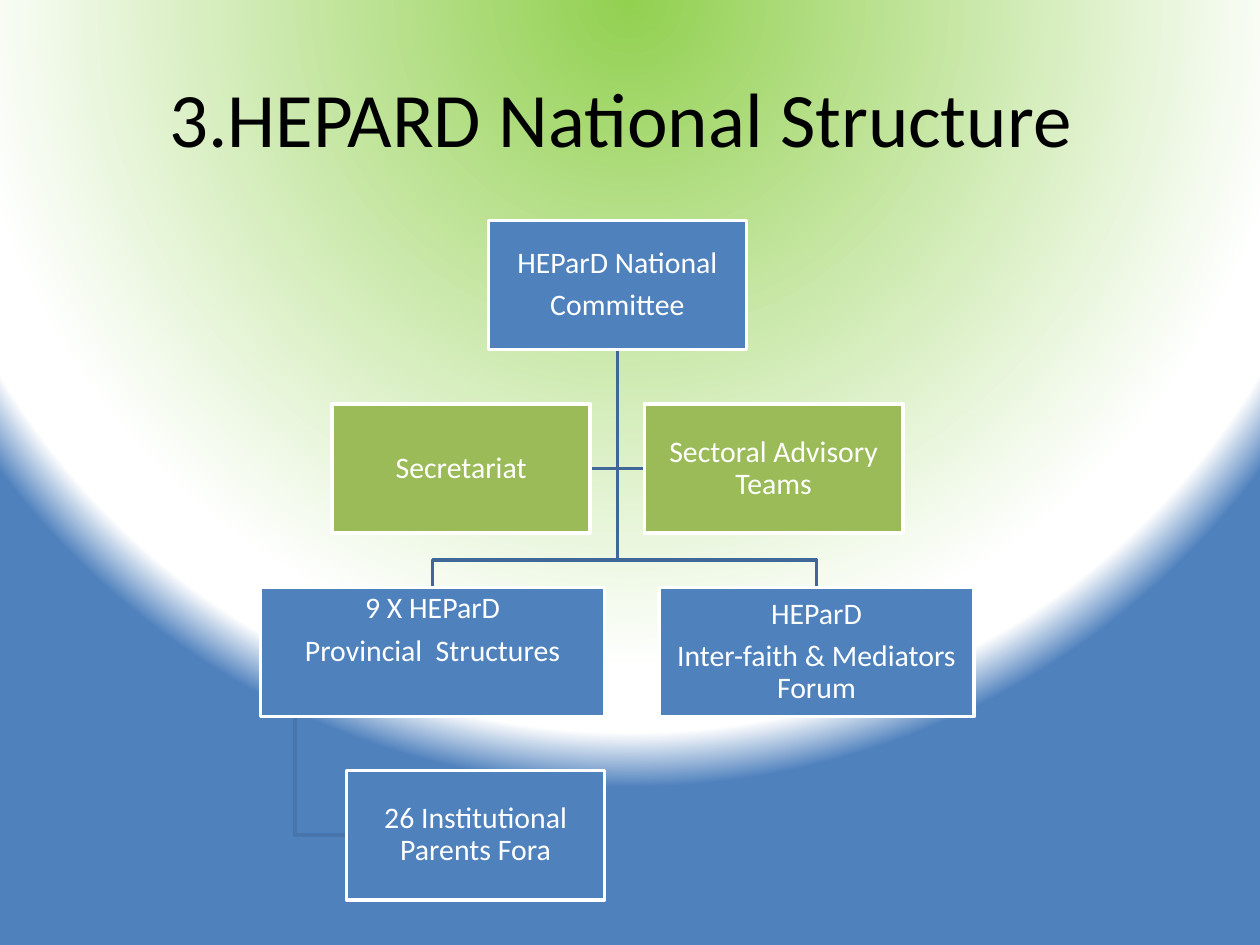
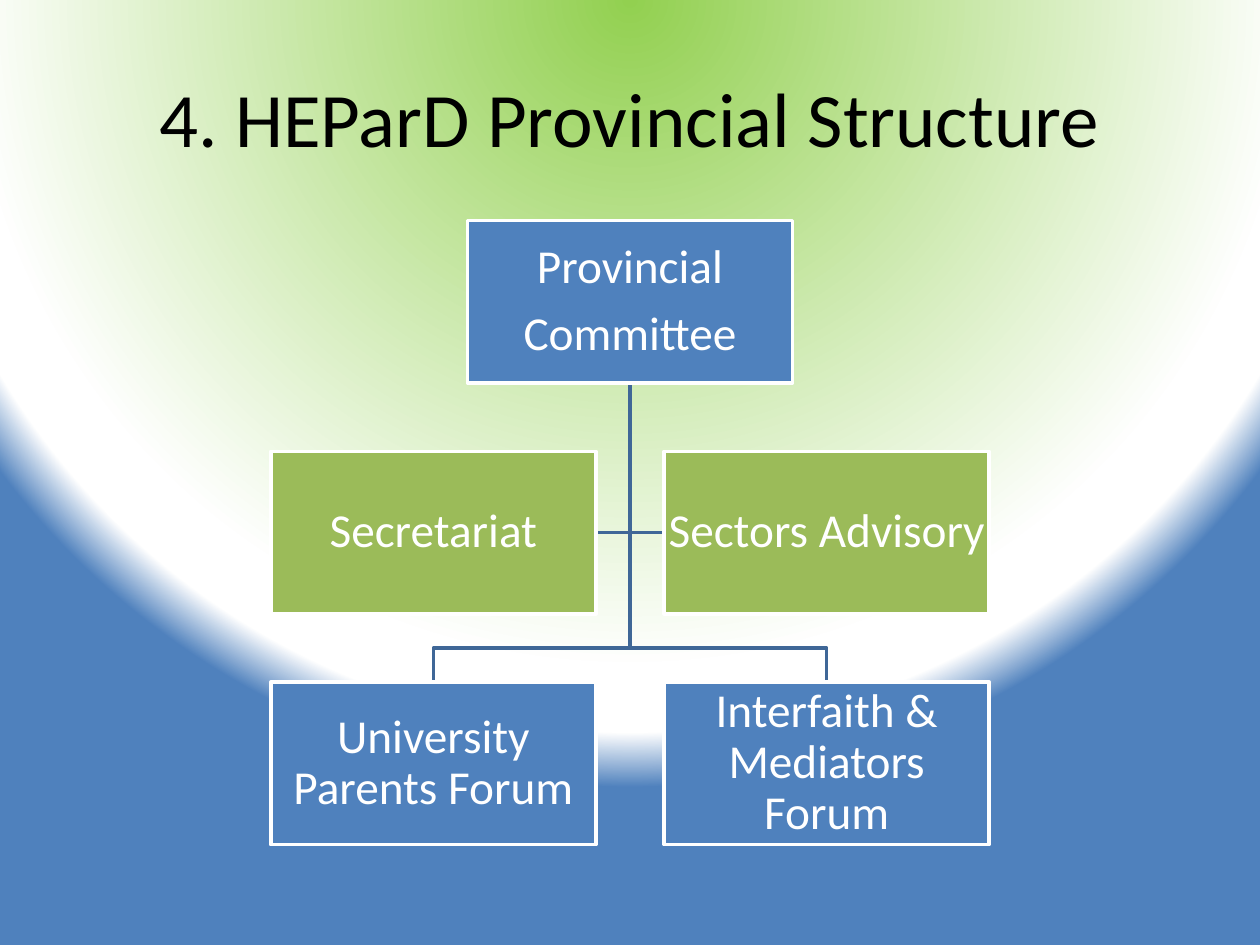
"""Build two organisation charts on a shared radial background."""
from collections import namedtuple

from pptx import Presentation
from pptx.dml.color import RGBColor
from pptx.enum.shapes import MSO_SHAPE as SHAPE
from pptx.enum.text import MSO_ANCHOR as ANCHOR, PP_ALIGN as ALIGN
from pptx.oxml import parse_xml
from pptx.oxml.ns import nsdecls
from pptx.util import Inches, Pt

BLUE = RGBColor(0x4F, 0x81, 0xBD)
LIME = RGBColor(0x92, 0xD0, 0x50)
GREEN = RGBColor(0x9B, 0xBB, 0x59)
NAVY = RGBColor(0x3F, 0x67, 0x97)
STEEL = RGBColor(0x48, 0x75, 0xAC)
WHITE = RGBColor(0xFF, 0xFF, 0xFF)
BLACK = RGBColor(0, 0, 0)
FONT = "Calibri"
TOP = 1.75
STOPS = [(0, LIME), (85, WHITE), (93, WHITE), (100, BLUE)]

Box = namedtuple("Box", "x y w h text fill")


def paint(master):
    """Give the master its radial gradient."""
    stops = "".join(
        f'<a:gs pos="{pos * 1000}"><a:srgbClr val="{tone}"/></a:gs>'
        for pos, tone in STOPS)
    master.background.fill.solid()
    props = master.element.cSld.bg.bgPr
    props.replace(props[0], parse_xml(
        f'<a:gradFill {nsdecls("a")} rotWithShape="1"><a:gsLst>{stops}</a:gsLst>'
        '<a:path path="circle"><a:fillToRect l="50000" t="-80000" '
        'r="50000" b="180000"/></a:path></a:gradFill>'))


def write(para, text, size, tone):
    """Add one centred run to a paragraph."""
    para.alignment = ALIGN.CENTER
    run = para.add_run()
    run.text = text
    run.font.name = FONT
    run.font.size = Pt(size)
    run.font.color.rgb = tone


def start(deck, text):
    """Add a slide with its title."""
    slide = deck.slides.add_slide(deck.slide_layouts[5])
    title = slide.shapes.title
    title.left, title.top = Inches(0.5), Inches(0.3)
    title.width, title.height = Inches(9), Inches(1.25)
    title.text_frame.vertical_anchor = ANCHOR.MIDDLE
    write(title.text_frame.paragraphs[0], text, 44, BLACK)
    return slide


def plan(mid, unit, level, items, fill=BLUE):
    """Lay out a centred row of (text, width) items."""
    gap, high = 0.21 * unit, unit / 2
    x = mid - (sum(wide for _, wide in items) + gap * (len(items) - 1)) / 2
    row = []
    for text, wide in items:
        row.append(Box(x, TOP + level * (high + gap), wide, high, text, fill))
        x += wide + gap
    return row


def trace(slide, points, tone=NAVY):
    """Draw an open line through the points."""
    first, *rest = [(Inches(x), Inches(y)) for x, y in points]
    path = slide.shapes.build_freeform(*first)
    path.add_line_segments(rest, close=False)
    line = path.convert_to_shape()
    line.fill.background()
    line.line.color.rgb = tone
    line.line.width = Pt(2)
    line.shadow.inherit = False


def link(slide, head, aides, units):
    """Join the head box to its aides and units."""
    mid, foot = head.x + head.w / 2, head.y + head.h
    for aide in aides:
        y = aide.y + aide.h / 2
        side = aide.x if aide.x > mid else aide.x + aide.w
        trace(slide, [(mid, foot), (mid, y), (side, y)])
    for unit in units:
        x = unit.x + unit.w / 2
        turn = unit.y - 0.21 * head.h
        trace(slide, [(mid, foot), (mid, turn), (x, turn), (x, unit.y)])


def draw(slide, box, size, inset, lift=0):
    """Draw a box with one paragraph per line, raised by half of lift."""
    shape = slide.shapes.add_shape(
        SHAPE.RECTANGLE, *map(Inches, (box.x, box.y, box.w, box.h)))
    shape.shadow.inherit = False
    shape.fill.solid()
    shape.fill.fore_color.rgb = box.fill
    shape.line.color.rgb = WHITE
    shape.line.width = Pt(2)
    frame = shape.text_frame
    frame.word_wrap = True
    frame.vertical_anchor = ANCHOR.MIDDLE
    frame.margin_left = frame.margin_right = frame.margin_top = Inches(inset)
    frame.margin_bottom = Inches(inset + lift)
    for i, text in enumerate(box.text.split("\n")):
        para = frame.add_paragraph() if i else frame.paragraphs[0]
        para.line_spacing = 0.9
        para.space_after = Pt(0.35 * size)
        write(para, text, size, WHITE)


def nation(deck):
    """Build the national chart."""
    slide = start(deck, "3.HEPARD National Structure ")
    mid, wide = 4.9, 2.05
    head, = plan(mid, wide, 0, [("HEParD National\nCommittee", wide)])
    aides = plan(mid, wide, 1, [("Secretariat", wide),
                                ("Sectoral Advisory Teams", wide)], GREEN)
    units = plan(mid, wide, 2, [
        ("9 X HEParD\nProvincial  Structures", 2.73),
        ("HEParD\nInter-faith & Mediators Forum", 2.5)])
    base = units[0]
    fora, = plan(base.x + base.w - wide / 2, wide, 3,
                 [("26 Institutional Parents Fora", wide)])
    link(slide, head, aides, units)
    stem, y = base.x + base.w / 10, fora.y + fora.h / 2
    trace(slide, [(stem, base.y + base.h), (stem, y), (fora.x, y)], STEEL)
    for box in [head, *units, fora, *aides]:
        draw(slide, box, 17, 0.01, 0.34 if box is base else 0)


def province(deck):
    """Build the provincial chart."""
    slide = start(deck, "4. HEParD Provincial Structure")
    mid, wide = 5, 2.58
    head, = plan(mid, wide, 0, [("Provincial\nCommittee", wide)])
    aides = plan(mid, wide, 1, [("Secretariat", wide),
                                ("Sectors Advisory", wide)], GREEN)
    units = plan(mid, wide, 2, [("University Parents Forum", wide),
                                ("Interfaith & Mediators Forum", wide)])
    link(slide, head, aides, units)
    for box in [head, *units, *aides]:
        draw(slide, box, 27, 0.02)


def main():
    """Build and save the deck."""
    deck = Presentation()
    deck.slide_width, deck.slide_height = Inches(10), Inches(7.5)
    paint(deck.slide_master)
    nation(deck)
    province(deck)
    deck.save("out.pptx")


if __name__ == "__main__":
    main()
